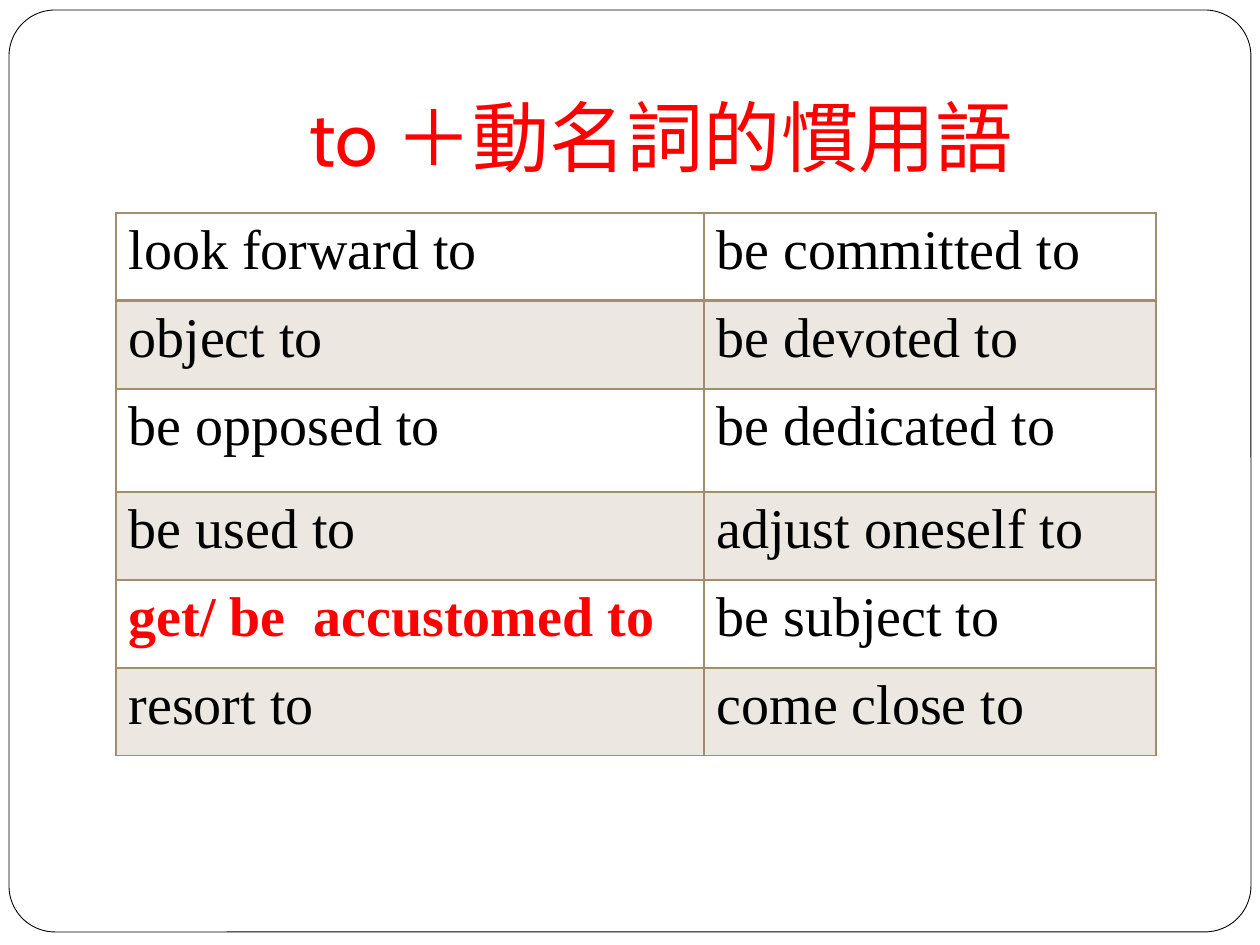
import pptx
import pptx.util
import pptx.dml.color
import pptx.enum.shapes
import pptx.enum.text
import pptx.oxml
import pptx.oxml.ns

THEME = {
    "paper": "FFFFFF", "ink": "000000", "accent": "FF0000",
    "border": "A28E6A", "band": "ECE8E1",
    "title_font": "Cabin", "title_size": 44.1,
    "body_font": "Times New Roman", "body_size": 32,
}
SCALE = 914400 / 126  # EMU in one px


def px(length):
    return pptx.util.Emu(round(length * SCALE))


def add_span(para, text, font, size, color, bold=False):
    span = para.add_run()
    span.text = text
    span.font.name = font
    span.font.size = pptx.util.Pt(size)
    span.font.bold = bold
    span.font.color.rgb = pptx.dml.color.RGBColor.from_string(THEME[color])


deck = pptx.Presentation()
deck.slide_width, deck.slide_height = px(1260), px(945)
page = deck.slides.add_slide(deck.slide_layouts[5])

# Rounded page frame, behind everything else
frame = page.shapes.add_shape(
    pptx.enum.shapes.MSO_SHAPE.ROUNDED_RECTANGLE, px(9), px(10), px(1242), px(922))
frame.adjustments[0] = 0.05
frame.shadow.inherit = False
frame.fill.solid()
frame.fill.fore_color.rgb = pptx.dml.color.RGBColor.from_string(THEME["paper"])
frame.line.color.rgb = pptx.dml.color.RGBColor.from_string(THEME["ink"])
frame.line.width = pptx.util.Pt(0.5)
page.shapes.title.element.addprevious(frame.element)

# Title
title = page.shapes.title
title.left, title.top, title.width, title.height = px(126), px(38), px(1071), px(157)
box = title.text_frame
box.word_wrap = True
box.auto_size = pptx.enum.text.MSO_AUTO_SIZE.NONE
box.vertical_anchor = pptx.enum.text.MSO_ANCHOR.BOTTOM
box.margin_left = box.margin_right = box.margin_bottom = px(13)
box.margin_top = px(6)
para = box.paragraphs[0]
para.alignment = pptx.enum.text.PP_ALIGN.CENTER
add_span(para, "to ＋動名詞的慣用語", THEME["title_font"], THEME["title_size"], "accent")

# Table of phrases
PHRASES = [
    ("look forward to", "be committed to"),
    ("object to", "be devoted to"),
    ("be opposed to", "be dedicated to"),
    ("be used to", "adjust oneself to"),
    ("get/ be  accustomed to", "be subject to"),
    ("resort to", "come close to"),
]
HIGHLIGHT = "get/ be  accustomed to"
COLUMN_WIDTHS = [588, 452]
ROW_HEIGHTS = [88, 88, 103, 88, 88, 88]

table = page.shapes.add_table(
    len(PHRASES), 2, px(116), px(213), px(sum(COLUMN_WIDTHS)), px(sum(ROW_HEIGHTS))).table
for column, width in zip(table.columns, COLUMN_WIDTHS):
    column.width = px(width)
for row, height in zip(table.rows, ROW_HEIGHTS):
    row.height = px(height)

for row_index, phrases in enumerate(PHRASES):
    for column_index, phrase in enumerate(phrases):
        cell = table.cell(row_index, column_index)
        cell.fill.solid()
        cell.fill.fore_color.rgb = pptx.dml.color.RGBColor.from_string(
            THEME["band" if row_index % 2 else "paper"])
        marked = phrase == HIGHLIGHT
        add_span(cell.text_frame.paragraphs[0], phrase, THEME["body_font"],
                 THEME["body_size"], "accent" if marked else "ink", marked)

        # Borders: 1 pt all round, 2 pt under the first row
        properties = cell._tc.get_or_add_tcPr()
        for position, side in enumerate(("L", "R", "T", "B")):
            heavy = (row_index, side) in ((0, "B"), (1, "T"))
            properties.insert(position, pptx.oxml.parse_xml(
                f'<a:ln{side} {pptx.oxml.ns.nsdecls("a")} w="{pptx.util.Pt(2 if heavy else 1)}">'
                f'<a:solidFill><a:srgbClr val="{THEME["border"]}"/></a:solidFill></a:ln{side}>'))

deck.save("out.pptx")
